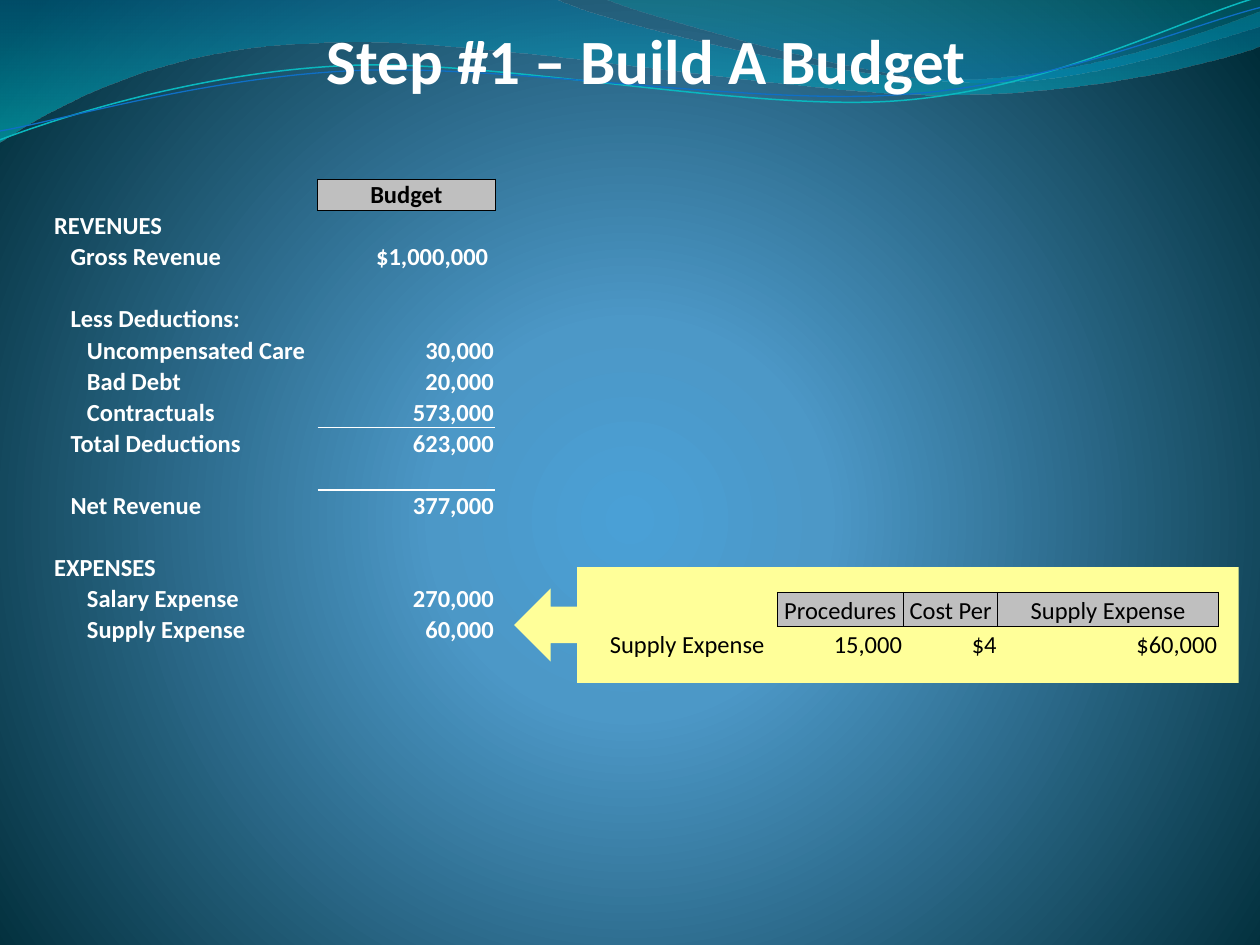
"""Build the budget slide with its income table and supply expense callout."""
from dataclasses import dataclass
from typing import Optional

from lxml.etree import SubElement
from pptx import Presentation
from pptx.dml.color import RGBColor
from pptx.enum.shapes import MSO_SHAPE as Shape
from pptx.enum.text import MSO_ANCHOR as Anchor, PP_ALIGN as Align
from pptx.oxml import parse_xml
from pptx.oxml.ns import nsdecls, qn
from pptx.util import Inches, Pt

WHITE = RGBColor(0xFF, 0xFF, 0xFF)
BLACK = RGBColor(0, 0, 0)
GREY = RGBColor(0xBF, 0xBF, 0xBF)
YELLOW = RGBColor(0xFF, 0xFF, 0x99)
BLUE_DEEP = RGBColor(0x00, 0x74, 0xA1)
TURQUOISE = RGBColor(0x00, 0xC6, 0xCF)
TEAL = RGBColor(0x00, 0xA1, 0xA9)
BLUE_MID = RGBColor(0x00, 0x8B, 0xBF)
AQUA = RGBColor(0x0A, 0xB8, 0xBF)
BLUE = RGBColor(0x0F, 0x6F, 0xC6)
BACKDROP = ((0, RGBColor(0x4A, 0xA0, 0xD6)), (25, RGBColor(0x4C, 0x98, 0xC7)),
            (100, RGBColor(0x00, 0x2C, 0x38)))
FONT = "Calibri"
NO_GRID = "{2D5ABB26-0587-4C30-8999-92F81FD0307C}"
INDENT = 0.13


@dataclass
class Wave:
    """Outline whose segments are line ends (2 numbers) or Bezier curves (6)."""
    start: tuple
    segments: list
    stops: tuple = ()
    line: Optional[RGBColor] = None
    width: float = 0


@dataclass
class Cell:
    """Text and look of one table cell."""
    text: str = ""
    align: Align = Align.LEFT
    level: int = 0
    color: RGBColor = WHITE
    bold: bool = False
    fill: Optional[RGBColor] = None
    edges: str = ""
    edge_color: RGBColor = BLACK
    edge_width: float = 0.5


WAVES = [
    Wave((0, 0), [(4.4, -0.01), (4.76, 0.17, 6.64, 0.63, 7.58, 0.63),
                  (8.53, 0.63, 9.58, 0.26, 10, 0.09), (10.01, 0.36),
                  (9.83, 0.44, 8.7, 0.76, 7.46, 0.75),
                  (6.22, 0.75, 3.82, 0.28, 2.57, 0.34),
                  (1.29, 0.36, 0.46, 0.83, -0.01, 1.13)],
         stops=((BLUE_DEEP, 45), (TURQUOISE, 55))),
    Wave((4.79, -0.01), [(5.09, 0.11, 6.82, 0.62, 7.69, 0.65),
                         (8.56, 0.69, 9.61, 0.32, 10, 0.21), (10, 0)],
         stops=((TEAL, 30), (BLUE_MID, 45))),
    Wave((0, 1.11), [(0.48, 0.93, 1.58, 0.57, 2.77, 0.52),
                     (3.95, 0.47, 5.93, 0.89, 7.13, 0.8),
                     (8.33, 0.71, 9.38, 0.15, 9.98, -0.02)], line=AQUA, width=0.85),
    Wave((0, 1.04), [(0.47, 0.96, 1.64, 0.61, 2.83, 0.56),
                     (4.03, 0.51, 5.97, 0.84, 7.17, 0.75),
                     (8.36, 0.67, 9.41, 0.21, 10, 0.06)], line=BLUE, width=0.75),
]

BUDGET = [
    ("REVENUES", 0, ""), ("Gross Revenue", 1, "$1,000,000 "), ("", 0, ""),
    ("Less Deductions:", 1, ""), ("Uncompensated Care", 2, "30,000"),
    ("Bad Debt", 2, "20,000"), ("Contractuals", 2, "573,000"),
    ("Total Deductions", 1, "623,000"), ("", 0, ""),
    ("Net Revenue", 1, "377,000"), ("", 0, ""), ("EXPENSES", 0, ""),
    ("Salary Expense", 2, "270,000"), ("Supply Expense", 2, "60,000"),
]
TOTALS = ("Total Deductions", "Net Revenue")


def set_background(s) -> None:
    stops = "".join(f'<a:gs pos="{pos * 1000}"><a:srgbClr val="{color}"/></a:gs>'
                    for pos, color in BACKDROP)
    s._element.cSld.insert(0, parse_xml(
        f'<p:bg {nsdecls("p", "a")}><p:bgPr><a:gradFill rotWithShape="1">'
        f'<a:gsLst>{stops}</a:gsLst><a:path path="circle">'
        '<a:fillToRect l="10000" t="110000" r="10000" b="100000"/></a:path>'
        '</a:gradFill><a:effectLst/></p:bgPr></p:bg>'))


def bend(sp, segments: list) -> None:
    """Turn each run of three straight segments that holds a curve into one Bezier."""
    lines = iter(list(sp._element.iter(qn("a:lnTo"))))
    for seg in segments:
        group = [next(lines) for _ in range(len(seg) // 2)]
        if len(group) == 3:
            curve = parse_xml(f'<a:cubicBezTo {nsdecls("a")}/>')
            group[0].addprevious(curve)
            for node in group:
                curve.append(node[0])
                node.getparent().remove(node)


def add_wave(s, wave: Wave) -> None:
    points = [(Inches(x), Inches(y)) for seg in wave.segments
              for x, y in zip(seg[::2], seg[1::2])]
    builder = s.shapes.build_freeform(*map(Inches, wave.start))
    builder.add_line_segments(points, close=bool(wave.stops))
    sp = builder.convert_to_shape()
    bend(sp, wave.segments)
    sp.shadow.inherit = False
    if not wave.stops:
        sp.fill.background()
        sp.line.color.rgb = wave.line
        sp.line.width = Pt(wave.width)
        return
    sp.line.fill.background()
    sp.fill.gradient()
    sp.fill.gradient_angle = 270
    for stop, pos, (color, _) in zip(sp.fill.gradient_stops, (0, 1), wave.stops):
        stop.position = pos
        stop.color.rgb = color
    colors = sp._element.spPr.iter(qn("a:srgbClr"))
    for node, (_, alpha) in zip(colors, wave.stops):
        SubElement(node, qn("a:alpha"), val=str(alpha * 1000))


def add_block(s, kind: Shape, left: float, top: float, width: float, height: float) -> None:
    sp = s.shapes.add_shape(kind, Inches(left), Inches(top), Inches(width), Inches(height))
    sp.shadow.inherit = False
    sp.fill.solid()
    sp.fill.fore_color.rgb = YELLOW
    sp.line.fill.background()


def write(p, text: str, *, size: float, color: RGBColor, bold: bool, align: Align) -> None:
    p.alignment = align
    if not text:
        SubElement(p._p, qn("a:endParaRPr"), sz=str(size * 100))
        return
    r = p.add_run()
    r.text = text
    r.font.name, r.font.size, r.font.bold = FONT, Pt(size), bold
    r.font.color.rgb = color


def format_cell(tc, cell: Cell) -> None:
    tc.margin_left = Inches(0.01 + cell.level * INDENT)
    tc.margin_right = tc.margin_top = Inches(0.01)
    tc.margin_bottom = 0
    tc.vertical_anchor = Anchor.BOTTOM
    for edge in "LRTB":
        ln = SubElement(tc._tc.get_or_add_tcPr(), qn(f"a:ln{edge}"),
                        w=str(Pt(cell.edge_width)))
        if edge in cell.edges:
            SubElement(SubElement(ln, qn("a:solidFill")), qn("a:srgbClr"),
                       val=str(cell.edge_color))
        else:
            SubElement(ln, qn("a:noFill"))
    if cell.fill is None:
        tc.fill.background()
    else:
        tc.fill.solid()
        tc.fill.fore_color.rgb = cell.fill
    write(tc.text_frame.paragraphs[0], cell.text, size=14, color=cell.color,
          bold=cell.bold, align=cell.align)


def add_grid(s, left: float, top: float, cols: list, row_height: float, rows: list) -> None:
    frame = s.shapes.add_table(len(rows), len(cols), Inches(left), Inches(top),
                               Inches(sum(cols)), Inches(row_height * len(rows)))
    tbl = frame.table
    tbl.first_row = tbl.horz_banding = False
    tbl._tbl.tblPr.find(qn("a:tableStyleId")).text = NO_GRID
    for col, width in zip(tbl.columns, cols):
        col.width = Inches(width)
    for i, row in enumerate(rows):
        tbl.rows[i].height = Inches(row_height)
        for j, cell in enumerate(row):
            format_cell(tbl.cell(i, j), cell)


def header(text: str, bold: bool = False) -> Cell:
    return Cell(text, Align.CENTER, color=BLACK, bold=bold, fill=GREY, edges="LRTB")


def budget_rows() -> list:
    rows = [[Cell(edges="R"), header("Budget", bold=True)]]
    for label, level, amount in BUDGET:
        value = Cell(amount, Align.RIGHT, bold=True, edges="" if rows[1:] else "T")
        if label in TOTALS:
            for cell, edge in ((rows[-1][1], "B"), (value, "T")):
                cell.edges, cell.edge_color, cell.edge_width = edge, WHITE, 1
        rows.append([Cell(label, level=level, bold=True), value])
    return rows


def supply_rows() -> list:
    heads = [header(text) for text in ("Procedures", "Cost Per", "Supply Expense")]
    values = [Cell(text, Align.RIGHT, color=BLACK, edges="T")
              for text in ("15,000", "$4", "$60,000")]
    return [[Cell(edges="R"), *heads], [Cell("Supply Expense", color=BLACK), *values]]


def add_title(s, text: str) -> None:
    sp = s.shapes.title
    sp.left, sp.top, sp.width, sp.height = map(Inches, (-1.14, -0.25, 12.56, 1.02))
    tf = sp.text_frame
    tf.word_wrap = True
    tf.vertical_anchor = Anchor.BOTTOM
    tf.margin_left = tf.margin_top = tf.margin_bottom = 0
    tf.margin_right = Inches(0.02)
    write(tf.paragraphs[0], text, size=36, color=WHITE, bold=True, align=Align.CENTER)
    s.shapes._spTree.append(sp._element)


def main() -> None:
    prs = Presentation()
    prs.slide_width, prs.slide_height = Inches(10), Inches(7.5)
    s = prs.slides.add_slide(prs.slide_layouts[5])
    set_background(s)
    for wave in WAVES:
        add_wave(s, wave)
    add_title(s, "Step #1 – Build A Budget")
    add_block(s, Shape.LEFT_ARROW, 4.08, 4.67, 2.08, 0.58)
    add_grid(s, 0.42, 1.42, [2.1, 1.41], 0.24, budget_rows())
    add_block(s, Shape.RECTANGLE, 4.58, 4.5, 5.25, 0.92)
    add_grid(s, 4.83, 4.7, [1.34, 1, 0.75, 1.75], 0.27, supply_rows())
    prs.save("out.pptx")


if __name__ == "__main__":
    main()
